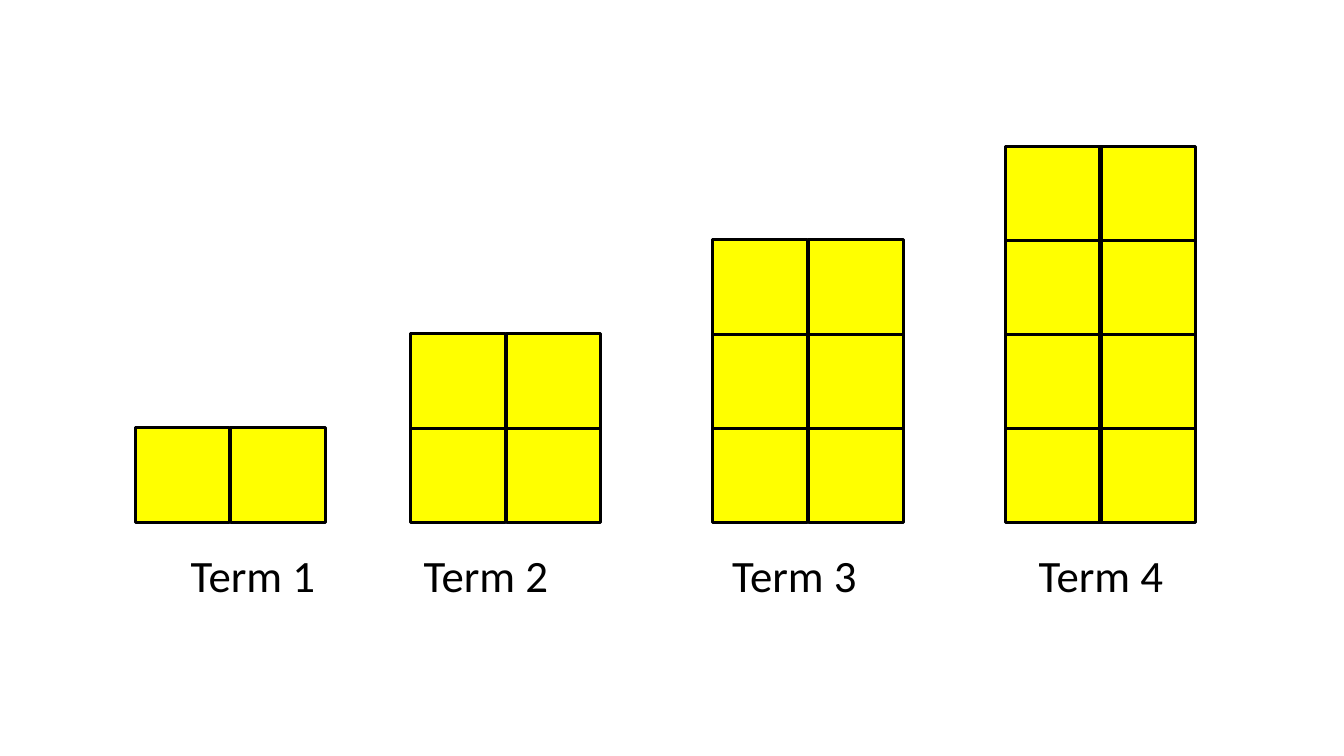
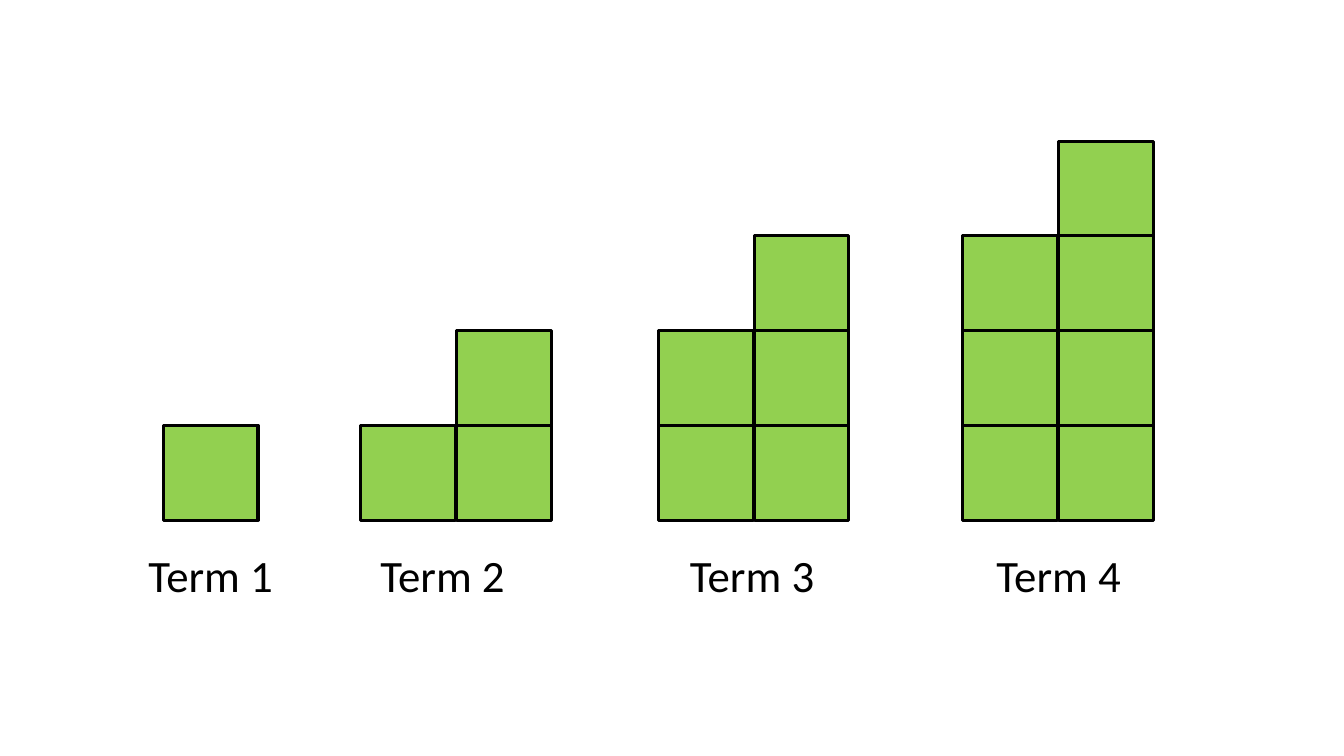
from pptx import Presentation
from pptx.dml.color import RGBColor
from pptx.enum.shapes import MSO_SHAPE
from pptx.enum.text import MSO_AUTO_SIZE, PP_ALIGN
from pptx.util import Inches, Pt

# Shared style and grid, in inches
COLORS = {"yellow": "FFFF00", "green": "92D050", "ink": "000000"}
FONT = "Calibri"
TILE = 0.94
COLUMN_STEP = 0.95
LABEL_TOP, LABEL_WIDTH, LABEL_HEIGHT = 5.38, 1.86, 0.64

# Each term: left edge of its tiles, left edge of its label, tiles per column
PATTERNS = [
    {"color": "yellow", "base": 4.24, "row_step": 0.93, "terms": [
        (1.34, 1.58, (1, 1)),
        (4.07, 3.89, (2, 2)),
        (7.07, 6.95, (3, 3)),
        (9.97, 9.99, (4, 4)),
    ]},
    {"color": "green", "base": 4.22, "row_step": 0.94, "terms": [
        (1.62, 1.16, (1,)),
        (3.58, 3.46, (1, 2)),
        (6.53, 6.53, (2, 3)),
        (9.55, 9.57, (3, 4)),
    ]},
]


def rgb(name):
    return RGBColor.from_string(COLORS[name])


def add_text(slide, text, left, top, width, height, size=32, color="ink",
             align=PP_ALIGN.CENTER):
    box = slide.shapes.add_textbox(
        Inches(left), Inches(top), Inches(width), Inches(height))
    frame = box.text_frame
    frame.word_wrap = True
    frame.auto_size = MSO_AUTO_SIZE.SHAPE_TO_FIT_TEXT
    paragraph = frame.paragraphs[0]
    paragraph.alignment = align
    run = paragraph.add_run()
    run.text = text
    run.font.name = FONT
    run.font.size = Pt(size)
    run.font.color.rgb = rgb(color)


def add_tile(shapes, left, top, color):
    tile = shapes.add_shape(MSO_SHAPE.RECTANGLE, Inches(left), Inches(top),
                            Inches(TILE), Inches(TILE))
    tile.shadow.inherit = False
    tile.fill.solid()
    tile.fill.fore_color.rgb = rgb(color)
    tile.line.color.rgb = rgb("ink")
    tile.line.width = Pt(2.25)


def add_tower(slide, left, base, row_step, column_heights, color):
    """Stack tiles upwards from the base; several tiles form one group."""
    shapes = slide.shapes
    if sum(column_heights) > 1:
        shapes = shapes.add_group_shape().shapes
    for column, height in enumerate(column_heights):
        for row in range(height):
            add_tile(shapes, left + column * COLUMN_STEP,
                     base - row * row_step, color)


def add_pattern_slide(deck, pattern):
    slide = deck.slides.add_slide(deck.slide_layouts[6])
    for number, term in enumerate(pattern["terms"], start=1):
        tower_left, label_left, column_heights = term
        add_tower(slide, tower_left, pattern["base"], pattern["row_step"],
                  column_heights, pattern["color"])
        add_text(slide, f"Term {number}", label_left, LABEL_TOP,
                 LABEL_WIDTH, LABEL_HEIGHT)


def main():
    deck = Presentation()
    deck.slide_width, deck.slide_height = Inches(13.33), Inches(7.5)
    for pattern in PATTERNS:
        add_pattern_slide(deck, pattern)
    deck.save("out.pptx")


if __name__ == "__main__":
    main()
